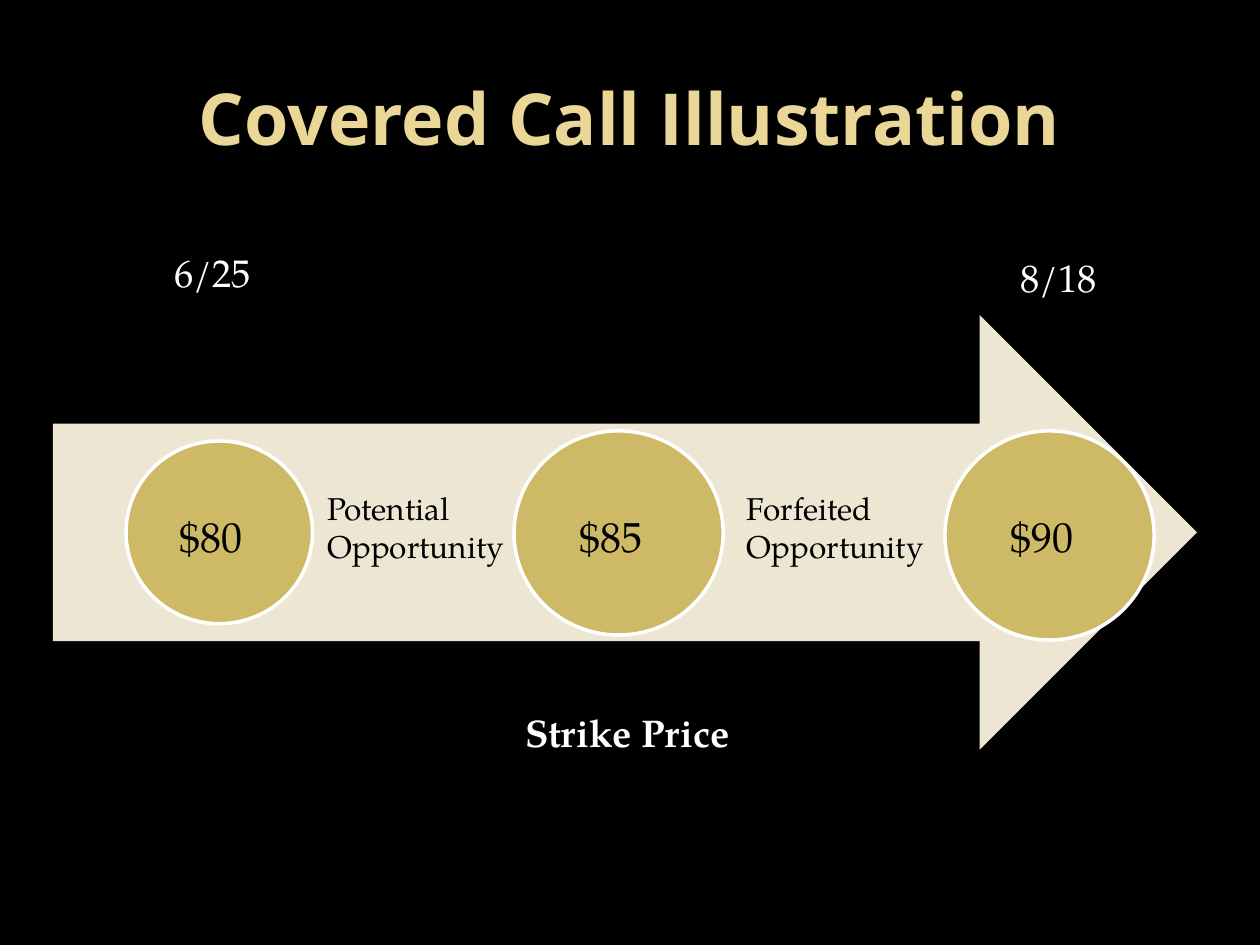
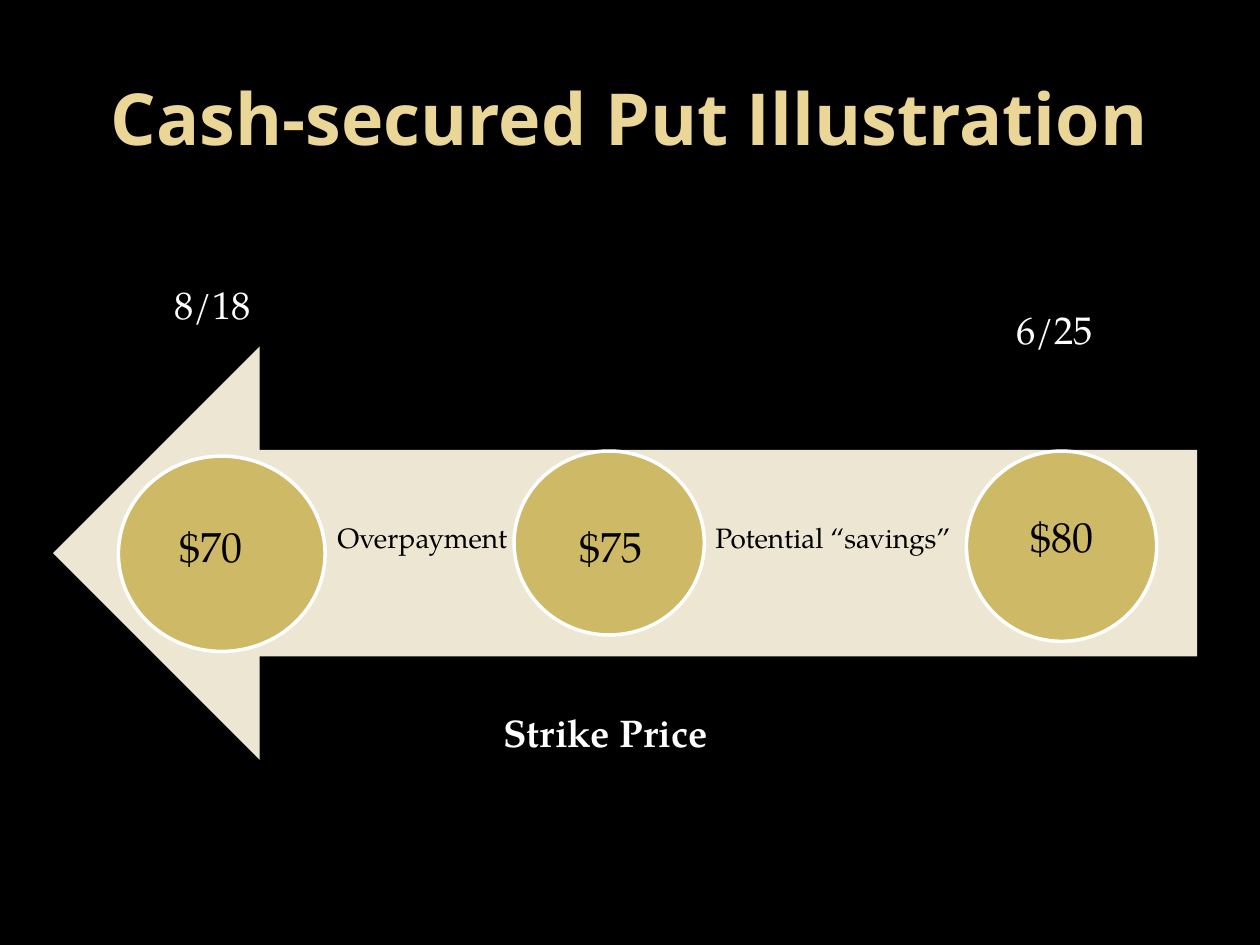
from dataclasses import dataclass

from pptx import Presentation
from pptx.dml.color import RGBColor
from pptx.enum.shapes import MSO_SHAPE
from pptx.enum.text import MSO_ANCHOR, MSO_AUTO_SIZE, PP_ALIGN
from pptx.util import Inches, Pt

RIGHT_ARROW, LEFT_ARROW = MSO_SHAPE.RIGHT_ARROW, MSO_SHAPE.LEFT_ARROW
OVAL = MSO_SHAPE.OVAL
TOP, MIDDLE, BOTTOM = MSO_ANCHOR.TOP, MSO_ANCHOR.MIDDLE, MSO_ANCHOR.BOTTOM
LEFT, CENTER = PP_ALIGN.LEFT, PP_ALIGN.CENTER
NO_AUTOFIT = MSO_AUTO_SIZE.NONE

BLACK, WHITE = "000000", "FFFFFF"
TITLE_GOLD, CIRCLE_GOLD, ARROW_CREAM = "EAD696", "CEB966", "EDE6D3"
TITLE_FONT, BODY_FONT = "Open Sans", "TeX Gyre Pagella"
ARROW_LEFT, ARROW_WIDTH = 0.42, 9.08
CAPTION_WIDTH, CAPTION_HEIGHT, CAPTION_INSET = 2.63, 0.95, 0.17
PRICE_HEIGHT = 0.5

Frame = tuple[float, float, float, float]


@dataclass
class Price:
    text: str
    circle: Frame
    text_left: float
    text_top: float


@dataclass
class Caption:
    """White text beside the arrow; edge is its top or bottom, by anchor."""
    text: str
    center: float
    edge: float
    anchor: MSO_ANCHOR = BOTTOM
    bold: bool = False


@dataclass
class Zone:
    text: str
    frame: Frame


@dataclass
class Illustration:
    title: str
    arrow: MSO_SHAPE
    arrow_top: float
    arrow_height: float
    price_width: float
    zone_size: float
    prices: list[Price]
    captions: list[Caption]
    zones: list[Zone]


ILLUSTRATIONS = [
    Illustration(
        "Covered Call Illustration", RIGHT_ARROW, 2.5, 3.45, 0.92, 18,
        [Price("$80", (1, 3.5, 1.48, 1.45), 1.33, 4),
         Price("$85", (4.08, 3.42, 1.66, 1.62), 4.5, 4),
         Price("$90", (7.5, 3.42, 1.66, 1.66), 7.92, 4)],
        [Caption("6/25", 1.69, 2.52),
         Caption("8/18", 8.4, 2.56),
         Caption("Strike Price", 4.98, 5.5, TOP, True)],
        [Zone("Potential Opportunity", (2.5, 3.83, 1.67, 0.71)),
         Zone("Forfeited Opportunity", (5.83, 3.83, 2.25, 0.71))]),
    Illustration(
        "Cash-secured Put Illustration", LEFT_ARROW, 2.75, 3.28, 0.75, 16,
        [Price("$70", (0.94, 3.62, 1.64, 1.55), 1.33, 4.08),
         Price("$75", (4.08, 3.58, 1.51, 1.46), 4.5, 4.08),
         Price("$80", (7.67, 3.58, 1.51, 1.51), 8.08, 4)],
        [Caption("8/18", 1.69, 2.77),
         Caption("6/25", 8.37, 2.97),
         Caption("Strike Price", 4.81, 5.5, TOP, True)],
        [Zone("Overpayment", (2.58, 4.08, 1.67, 0.37)),
         Zone("Potential “savings”", (5.58, 4.08, 2.5, 0.37))]),
]


def color(value: str) -> RGBColor:
    return RGBColor.from_string(value)


def place(shape, frame: Frame) -> None:
    shape.left, shape.top, shape.width, shape.height = map(Inches, frame)


def write(text_frame, text: str, size: float, fill: str, font: str = BODY_FONT,
          bold: bool = False, align: PP_ALIGN = LEFT, anchor: MSO_ANCHOR = TOP):
    """Fill a text frame with one formatted paragraph and return it."""
    text_frame.word_wrap = True
    text_frame.auto_size = NO_AUTOFIT
    text_frame.vertical_anchor = anchor
    para = text_frame.paragraphs[0]
    para.alignment = align
    span = para.add_run()
    span.text = text
    span.font.name, span.font.size, span.font.bold = font, Pt(size), bold
    span.font.color.rgb = color(fill)
    return para


def add_figure(slide, kind: MSO_SHAPE, frame: Frame, fill: str):
    figure = slide.shapes.add_shape(kind, *map(Inches, frame))
    figure.shadow.inherit = False
    figure.fill.solid()
    figure.fill.fore_color.rgb = color(fill)
    figure.line.fill.background()
    return figure


def add_circle(slide, frame: Frame) -> None:
    circle = add_figure(slide, OVAL, frame, CIRCLE_GOLD)
    circle.line.color.rgb = color(WHITE)
    circle.line.width = Pt(2)


def add_label(slide, text: str, frame: Frame, size: float) -> None:
    box = slide.shapes.add_textbox(*map(Inches, frame))
    write(box.text_frame, text, size, BLACK)


def add_caption(slide, caption: Caption) -> None:
    top = caption.edge - (CAPTION_HEIGHT if caption.anchor == BOTTOM else 0)
    left = caption.center - CAPTION_WIDTH / 2
    box = slide.shapes.add_textbox(
        *map(Inches, (left, top, CAPTION_WIDTH, CAPTION_HEIGHT)))
    text_frame = box.text_frame
    text_frame.margin_left = text_frame.margin_right = Inches(CAPTION_INSET)
    text_frame.margin_top = text_frame.margin_bottom = Inches(CAPTION_INSET)
    para = write(text_frame, caption.text, 22, WHITE, bold=caption.bold,
                 align=CENTER, anchor=caption.anchor)
    para.line_spacing = 0.9


def add_illustration(deck, page: Illustration) -> None:
    slide = deck.slides.add_slide(deck.slide_layouts.get_by_name("Title Only"))
    title = slide.shapes.title
    place(title, (0.5, 0.3, 9, 1.25))
    write(title.text_frame, page.title, 41, TITLE_GOLD, TITLE_FONT, True,
          CENTER, MIDDLE)
    add_figure(slide, page.arrow,
               (ARROW_LEFT, page.arrow_top, ARROW_WIDTH, page.arrow_height),
               ARROW_CREAM)
    for price in page.prices:
        add_circle(slide, price.circle)
    for caption in page.captions:
        add_caption(slide, caption)
    for zone in page.zones:
        add_label(slide, zone.text, zone.frame, page.zone_size)
    for price in page.prices:
        frame = (price.text_left, price.text_top, page.price_width, PRICE_HEIGHT)
        add_label(slide, price.text, frame, 24)


def main() -> None:
    deck = Presentation()
    deck.slide_width, deck.slide_height = Inches(10), Inches(7.5)
    background = deck.slide_master.background.fill
    background.solid()
    background.fore_color.rgb = color(BLACK)
    for page in ILLUSTRATIONS:
        add_illustration(deck, page)
    deck.save("out.pptx")


if __name__ == "__main__":
    main()
